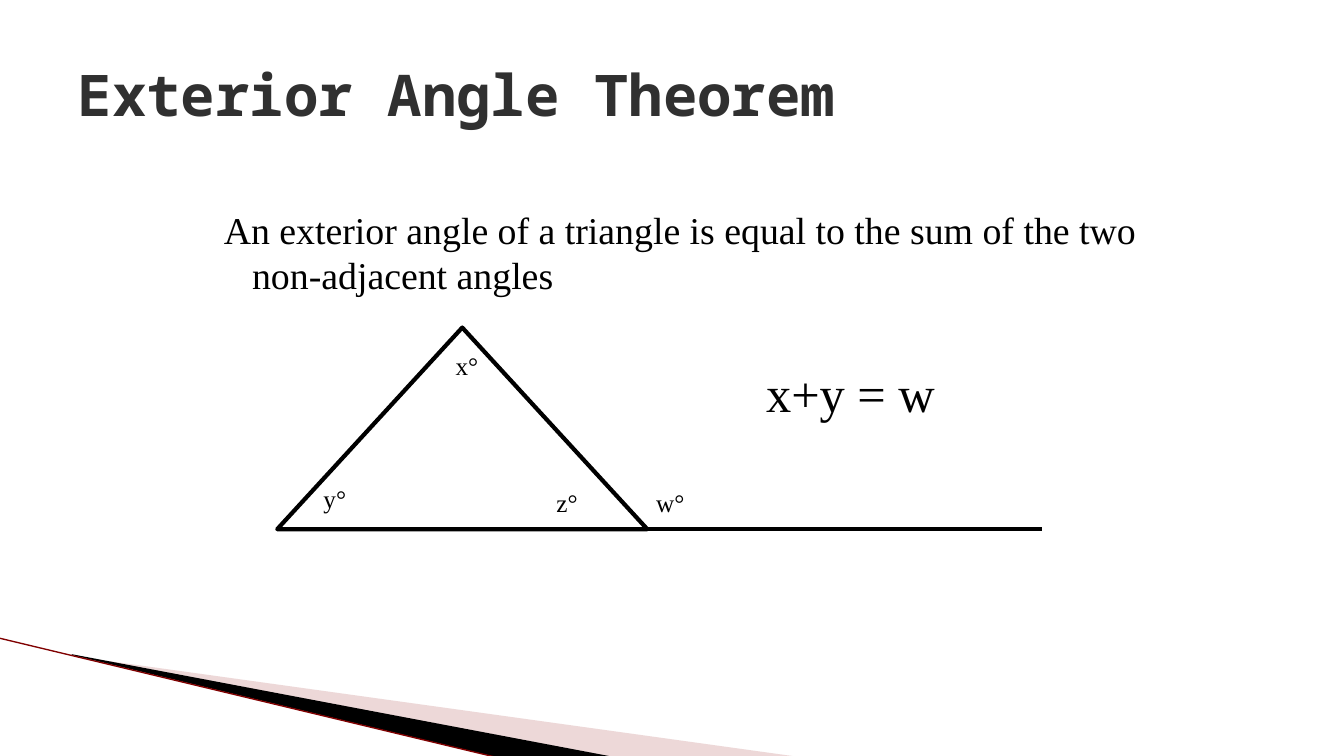
from lxml import etree
from pptx import Presentation
from pptx.dml.color import RGBColor
from pptx.enum.shapes import MSO_CONNECTOR, MSO_SHAPE
from pptx.enum.text import MSO_ANCHOR, MSO_AUTO_SIZE, PP_ALIGN
from pptx.oxml.ns import qn
from pptx.util import Inches, Pt

STRAIGHT = MSO_CONNECTOR.STRAIGHT
TRIANGLE = MSO_SHAPE.ISOSCELES_TRIANGLE
TOP, MIDDLE = MSO_ANCHOR.TOP, MSO_ANCHOR.MIDDLE
NO_FIT, FIT_SHAPE = MSO_AUTO_SIZE.NONE, MSO_AUTO_SIZE.SHAPE_TO_FIT_TEXT
LEFT = PP_ALIGN.LEFT


def color(value):
    return RGBColor.from_string(value)


def write_text(shape, text, size, font="Times New Roman", ink="000000", bold=False,
               anchor=TOP, fit=NO_FIT, indent=None):
    frame = shape.text_frame
    frame.word_wrap = True
    frame.auto_size = fit
    frame.vertical_anchor = anchor
    frame.text = text
    paragraph = frame.paragraphs[0]
    paragraph.alignment = LEFT
    paragraph.space_before = Pt(0)
    if indent:
        properties = paragraph._p.get_or_add_pPr()
        margin, first_line = indent
        properties.set("marL", str(Inches(margin)))
        properties.set("indent", str(Inches(first_line)))
        etree.SubElement(properties, qn("a:buNone"))
    font_format = paragraph.runs[0].font
    font_format.name = font
    font_format.size = Pt(size)
    font_format.bold = bold
    font_format.color.rgb = color(ink)


class TheoremSlide:
    ink = "000000"
    stroke = 3

    def __init__(self, presentation):
        self.slide = presentation.slides.add_slide(presentation.slide_layouts[1])
        self.shapes = self.slide.shapes

    def placeholder(self, index, box, text, size, **text_format):
        shape = self.slide.placeholders[index]
        shape.left, shape.top, shape.width, shape.height = map(Inches, box)
        write_text(shape, text, size, **text_format)

    def wedge(self, points, fill, opacity=100):
        corners = [(Inches(x), Inches(y)) for x, y in points]
        builder = self.shapes.build_freeform(*corners[0])
        builder.add_line_segments(corners[1:])
        shape = builder.convert_to_shape()
        shape.shadow.inherit = False
        shape.fill.solid()
        shape.fill.fore_color.rgb = color(fill)
        shape.line.fill.background()
        if opacity < 100:
            fill_color = shape._element.spPr.find(qn("a:solidFill"))[0]
            etree.SubElement(fill_color, qn("a:alpha"), val=str(opacity * 1000))

    def line(self, start, end, ink=ink, width=stroke):
        connector = self.shapes.add_connector(STRAIGHT, *map(Inches, start + end))
        connector.line.color.rgb = color(ink)
        connector.line.width = Pt(width)
        etree.SubElement(connector._element.spPr, qn("a:effectLst"))

    def triangle(self, box):
        shape = self.shapes.add_shape(TRIANGLE, *map(Inches, box))
        shape.shadow.inherit = False
        shape.fill.background()
        shape.line.color.rgb = color(self.ink)
        shape.line.width = Pt(self.stroke)

    def label(self, box, text, size=18):
        shape = self.shapes.add_textbox(*map(Inches, box))
        write_text(shape, text, size, fit=FIT_SHAPE)


def main():
    presentation = Presentation()
    presentation.slide_width = Inches(13.33)
    presentation.slide_height = Inches(7.5)
    theorem = TheoremSlide(presentation)

    theorem.wedge([(0.73, 6.51), (7.93, 7.51), (6.08, 7.51), (0.73, 6.5)], "D29E9E", 40)
    theorem.wedge([(0.71, 6.49), (6.09, 7.51), (4.96, 7.52), (0.72, 6.5)], "000000")
    theorem.line((-0.01, 6.33), (4.95, 7.52), "800000", 0.95)

    theorem.placeholder(0, (0.67, 0.3, 12, 1.25), "Exterior Angle Theorem", 41,
                        font="Noto Sans Mono", ink="303030", bold=True, anchor=MIDDLE)
    theorem.placeholder(1, (2, 2, 9.67, 1.92),
                        "An exterior angle of a triangle is equal to the sum of the two "
                        "non-adjacent angles", 27, indent=(0.4, -0.28))

    theorem.triangle((2.75, 3.25, 3.67, 2))
    theorem.line((2.75, 5.25), (10.33, 5.25))
    theorem.label((7.5, 3.54, 2.27, 0.71), "x+y = w", 36)
    for angle, left, top, width in (("x°", 4.42, 3.43, 0.91), ("y°", 3.11, 4.75, 0.89),
                                    ("z°", 5.42, 4.79, 0.95), ("w°", 6.41, 4.79, 1.01)):
        theorem.label((left, top, width, 0.4), angle)

    presentation.save("out.pptx")


if __name__ == "__main__":
    main()
